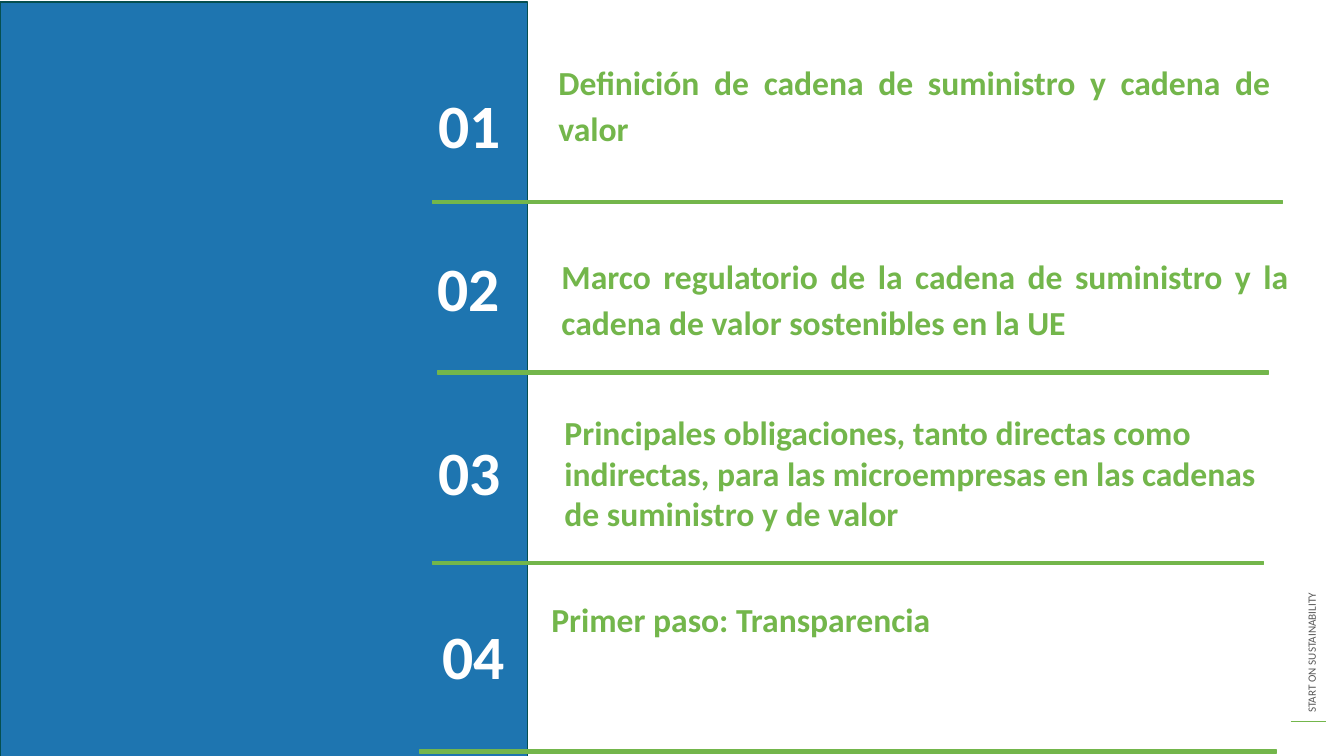
from pptx import Presentation
from pptx.dml.color import RGBColor
from pptx.enum.shapes import MSO_CONNECTOR, MSO_SHAPE
from pptx.enum.text import PP_ALIGN
from pptx.oxml.ns import qn
from pptx.util import Inches, Pt

RECTANGLE = MSO_SHAPE.RECTANGLE
STRAIGHT = MSO_CONNECTOR.STRAIGHT
LEFT = PP_ALIGN.LEFT
JUSTIFY = PP_ALIGN.JUSTIFY

GREEN = "73B64B"
BLUE = "1E75B0"
DARK_GREEN = "054F50"
WHITE = "FFFFFF"
GREY = "595959"


def color(value):
    return RGBColor.from_string(value)


class AgendaSlide:
    font = "Calibri"
    line_width = Pt(1)

    def __init__(self, slide):
        self.shapes = slide.shapes

    def text(self, text, box, size=24, fill=GREEN, bold=True, align=LEFT,
             spacing=1.0, before=0, rotation=0):
        label = self.shapes.add_textbox(*map(Inches, box))
        label.rotation = rotation
        label.text_frame.word_wrap = True
        paragraph = label.text_frame.paragraphs[0]
        paragraph.alignment = align
        paragraph.line_spacing = spacing
        paragraph.space_before = Pt(before)
        run = paragraph.add_run()
        run.text = text
        run.font.name = self.font
        run.font.size = Pt(size)
        run.font.bold = bold
        run.font.color.rgb = color(fill)

    def bar(self, box, fill=GREEN, outline=GREEN):
        bar = self.shapes.add_shape(RECTANGLE, *map(Inches, box))
        bar.shadow.inherit = False
        bar.fill.solid()
        bar.fill.fore_color.rgb = color(fill)
        bar.line.color.rgb = color(outline)
        bar.line.width = self.line_width

    def rule(self, start, end, stroke=GREEN):
        rule = self.shapes.add_connector(STRAIGHT, *map(Inches, start + end))
        rule.line.color.rgb = color(stroke)
        rule.line.width = self.line_width
        properties = rule._element.spPr
        properties.append(properties.makeelement(qn("a:effectLst"), {}))


TOPICS = [
    ("Definición de cadena de suministro y cadena de valor",
     (5.44, 0.5, 7.26, 1.22), dict(align=JUSTIFY, spacing=1.15, before=8),
     (4.25, 0.59, 1.36, 1.4), (4.29, 1.99, 8.43)),
    ("Marco regulatorio de la cadena de suministro y la cadena de valor "
     "sostenibles en la UE",
     (5.47, 2.43, 7.41, 0.88), dict(align=JUSTIFY, spacing=1.15, before=8),
     (4.24, 2.21, 1.21, 1.07), (4.34, 3.68, 8.24)),
    ("Principales obligaciones, tanto directas como indirectas, para las "
     "microempresas en las cadenas de suministro y de valor",
     (5.5, 4.04, 7.45, 1.22), {},
     (4.25, 4.04, 0.84, 0.8), (4.29, 5.57, 8.24)),
    ("Primer paso: Transparencia",
     (5.37, 5.83, 7.72, 0.88), dict(spacing=1.15),
     (4.29, 5.86, 0.92, 0.8), (4.16, 7.44, 8.5)),
]


def main():
    deck = Presentation()
    deck.slide_width = Inches(13.33)
    deck.slide_height = Inches(7.5)
    agenda = AgendaSlide(deck.slides.add_slide(deck.slide_layouts[6]))

    agenda.text("START ON SUSTAINABILITY", (10.78, 4.82, 4.46, 0.24),
                size=8, fill=GREY, bold=False, rotation=270)
    agenda.rule((12.8, 7.16), (13.15, 7.16))
    agenda.bar((0, 0.02, 5.23, 7.5), fill=BLUE, outline=DARK_GREEN)

    for number, (topic, topic_box, style, number_box, divider) in enumerate(TOPICS, 1):
        agenda.text(topic, topic_box, **style)
        agenda.text(f"{number:02d}", number_box, size=44, fill=WHITE, spacing=1.3)
        agenda.bar((*divider, 0.03))

    deck.save("out.pptx")


if __name__ == "__main__":
    main()
